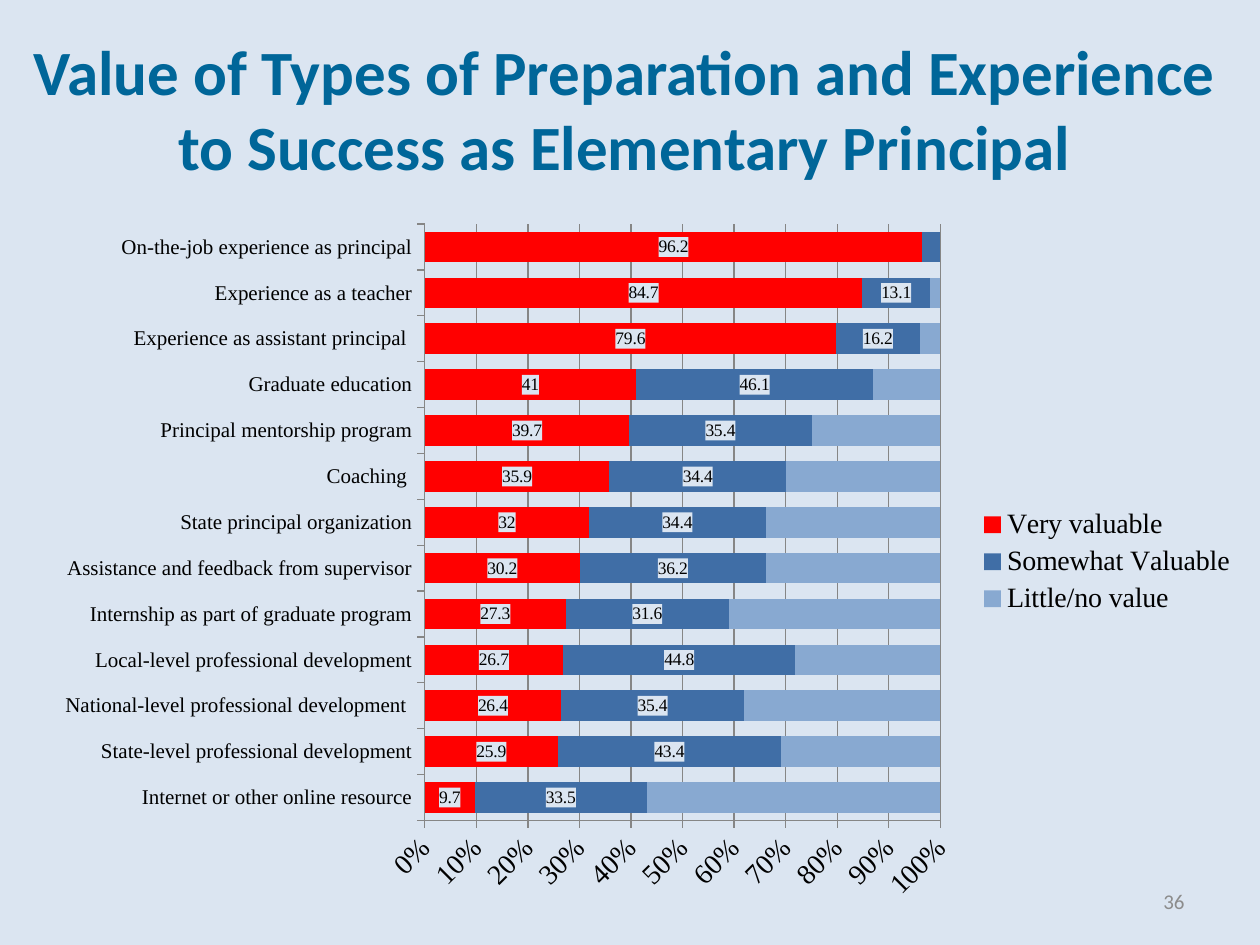
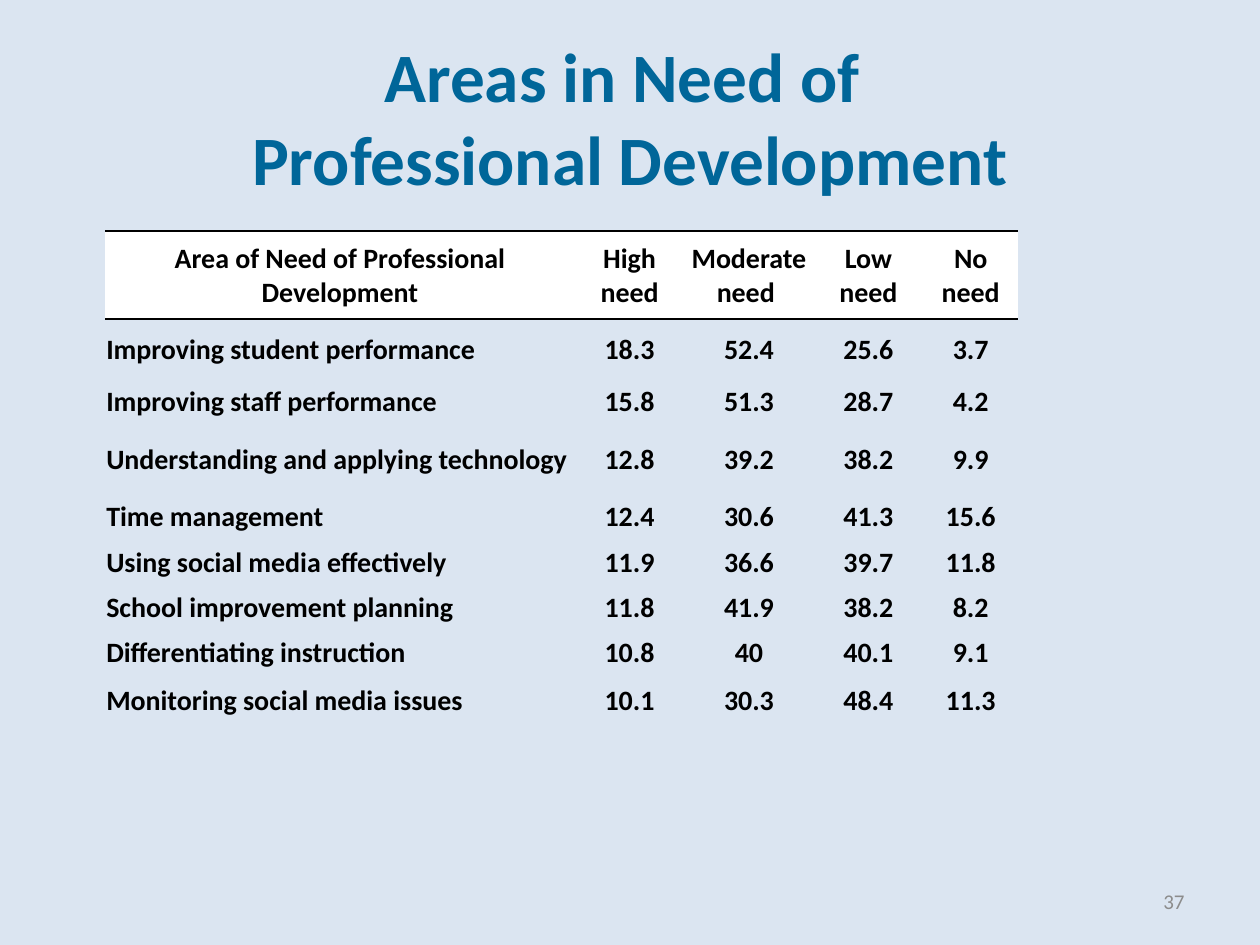
"""Build two survey slides: preparation value chart and development needs table."""
import lxml.etree
import pptx
import pptx.chart.data
import pptx.dml.color
import pptx.enum.chart
import pptx.enum.text
import pptx.oxml
import pptx.oxml.ns
import pptx.util

Pt = pptx.util.Pt
ALIGN = pptx.enum.text.PP_ALIGN
MIDDLE = pptx.enum.text.MSO_ANCHOR.MIDDLE
qn = pptx.oxml.ns.qn
NS = pptx.oxml.ns.nsdecls("a", "c")

COLORS = {
    "background": "DBE5F1", "title": "006699", "text": "000000", "number": "8C8C8C",
    "axis": "868686", "header": "FFFFFF",
    "very": "FF0000", "somewhat": "406EA6", "little": "88A9D1",
}
BODY_FONT = "Calibri"
CHART_FONT = "Times New Roman"
NUMBER_BOX = (516, 500.5, 168, 28.75)
NO_STYLE = "{2D5ABB26-0587-4C30-8999-92F81FD0307C}"

RATINGS = ("Very valuable", "Somewhat Valuable", "Little/no value")
RATING_COLORS = ("very", "somewhat", "little")
EXPERIENCES = [
    ("Internet or other online resource", 9.7, 33.5, 57),
    ("State-level professional development", 25.9, 43.4, 31),
    ("National-level professional development ", 26.4, 35.4, 38),
    ("Local-level professional development", 26.7, 44.8, 28),
    ("Internship as part of graduate program", 27.3, 31.6, 41),
    ("Assistance and feedback from supervisor", 30.2, 36.2, 34),
    ("State principal organization", 32, 34.4, 34),
    ("Coaching ", 35.9, 34.4, 30),
    ("Principal mentorship program", 39.7, 35.4, 25),
    ("Graduate education", 41, 46.1, 13),
    ("Experience as assistant principal ", 79.6, 16.2, 4),
    ("Experience as a teacher", 84.7, 13.1, 2),
    ("On-the-job experience as principal", 96.2, 3.5, 0),
]

NEEDS = [
    ("Area of Need of Professional Development",
     "High need", "Moderate need ", "Low need", "No need"),
    ("Improving student performance", "18.3", "52.4", "25.6", "3.7"),
    ("Improving staff performance", "15.8", "51.3", "28.7", "4.2"),
    ("Understanding and applying technology", "12.8", "39.2", "38.2", "9.9"),
    ("Time management", "12.4", "30.6", "41.3", "15.6"),
    ("Using social media effectively", "11.9", "36.6", "39.7", "11.8"),
    ("School improvement planning", "11.8", "41.9", "38.2", "8.2"),
    ("Differentiating instruction", "10.8", "40", "40.1", "9.1"),
    ("Monitoring social media issues", "10.1", "30.3", "48.4", "11.3"),
]
NEED_WIDTHS = (268.5, 62.5, 74, 62.5, 54.5)
NEED_HEIGHTS = (50.4, 33.8, 25.8, 40.4, 25.8, 25.8, 25.8, 25.8, 29.4)


def rgb(name):
    """Return the named palette colour."""
    return pptx.dml.color.RGBColor.from_string(COLORS[name])


def style_font(font, family, size, color, bold=False):
    """Set family, size, colour and weight of a font."""
    font.name, font.size, font.bold = family, Pt(size), bold
    font.color.rgb = rgb(color)


def add_text(slide, box, text, size, color, align, bold=False):
    """Add a vertically centred text box."""
    frame = slide.shapes.add_textbox(*map(Pt, box)).text_frame
    frame.word_wrap = True
    frame.vertical_anchor = MIDDLE
    paragraph = frame.paragraphs[0]
    paragraph.text = text
    paragraph.alignment = align
    style_font(paragraph.font, BODY_FONT, size, color, bold)


def add_page(deck, title, title_box, title_size, number):
    """Add a blank slide with background, title and slide number."""
    slide = deck.slides.add_slide(deck.slide_layouts[6])
    fill = slide.background.fill
    fill.solid()
    fill.fore_color.rgb = rgb("background")
    add_text(slide, title_box, title, title_size, "title", ALIGN.CENTER, True)
    add_text(slide, NUMBER_BOX, str(number), 12, "number", ALIGN.RIGHT)
    return slide


def label_values(series, hidden=()):
    """Show values on background-coloured tags, except at hidden points."""
    labels = series.data_labels
    labels.show_value = True
    style_font(labels.font, CHART_FONT, 10, "text")
    tag = pptx.oxml.parse_xml(
        f'<c:spPr {NS}><a:solidFill><a:srgbClr val="{COLORS["background"]}"/>'
        '</a:solidFill></c:spPr>')
    labels._element.find(qn("c:txPr")).addprevious(tag)
    for index in hidden:
        labels._element.insert(0, pptx.oxml.parse_xml(
            f'<c:dLbl {NS}><c:idx val="{index}"/><c:delete val="1"/></c:dLbl>'))


def place_plot(chart, x, y, w, h):
    """Fix the inner plot area as fractions of the chart."""
    area = chart._chartSpace.find(".//" + qn("c:plotArea"))
    for old in area.findall(qn("c:layout")):
        area.remove(old)
    area.insert(0, pptx.oxml.parse_xml(
        f'<c:layout {NS}><c:manualLayout><c:layoutTarget val="inner"/>'
        '<c:xMode val="edge"/><c:yMode val="edge"/>'
        f'<c:x val="{x}"/><c:y val="{y}"/><c:w val="{w}"/><c:h val="{h}"/>'
        '</c:manualLayout></c:layout>'))


def add_value_chart(slide, box):
    """Add the stacked bars that rate each kind of experience."""
    experiences, *ratings = zip(*EXPERIENCES)
    data = pptx.chart.data.CategoryChartData()
    data.categories = experiences
    for rating, values in zip(RATINGS, ratings):
        data.add_series(rating, values)
    kind = pptx.enum.chart.XL_CHART_TYPE.BAR_STACKED_100
    chart = slide.shapes.add_chart(kind, *map(Pt, box), data).chart
    style_font(chart.font, CHART_FONT, 16, "text")
    chart.has_title = False
    chart.has_legend = True
    chart.legend.position = pptx.enum.chart.XL_LEGEND_POSITION.RIGHT
    chart.legend.include_in_layout = False
    place_plot(chart, 0.317, 0.02, 0.427, 0.848)

    bars = chart.plots[0]
    bars.gap_width, bars.overlap = 50, 100
    bars.vary_by_categories = False
    for series, color in zip(bars.series, RATING_COLORS):
        series.format.fill.solid()
        series.format.fill.fore_color.rgb = rgb(color)
    label_values(bars.series[0])
    label_values(bars.series[1], hidden=[len(EXPERIENCES) - 1])

    for axis, size in ((chart.category_axis, 12), (chart.value_axis, 16)):
        axis.major_tick_mark = pptx.enum.chart.XL_TICK_MARK.OUTSIDE
        axis.format.line.color.rgb = rgb("axis")
        style_font(axis.tick_labels.font, CHART_FONT, size, "text")
    percent = chart.value_axis
    percent.has_major_gridlines = True
    percent.major_gridlines.format.line.color.rgb = rgb("axis")
    percent.major_unit = 0.1
    percent.tick_labels.number_format = "0%"
    percent.tick_labels.number_format_is_linked = False
    percent._element.find(".//" + qn("a:bodyPr")).set("rot", "-2700000")


def rule_cell(cell):
    """Draw thin rules above and below a cell."""
    properties = cell._tc.get_or_add_tcPr()
    for index, side in enumerate(("lnT", "lnB")):
        properties.insert(index, pptx.oxml.parse_xml(
            f'<a:{side} {NS} w="12700"><a:solidFill>'
            f'<a:srgbClr val="{COLORS["text"]}"/></a:solidFill></a:{side}>'))


def fill_cell(cell, text, header, align):
    """Write and style one table cell."""
    cell.margin_left = cell.margin_right = cell.margin_top = Pt(0.75)
    cell.margin_bottom = 0
    cell.vertical_anchor = MIDDLE
    paragraph = cell.text_frame.paragraphs[0]
    paragraph.text = text
    paragraph.alignment = align
    style_font(paragraph.font, BODY_FONT, 16, "text", True)
    if header:
        cell.fill.solid()
        cell.fill.fore_color.rgb = rgb("header")
        rule_cell(cell)
    else:
        cell.fill.background()


def add_needs_table(slide, left, top):
    """Add the table of development needs."""
    table = slide.shapes.add_table(
        len(NEEDS), len(NEED_WIDTHS), Pt(left), Pt(top),
        Pt(sum(NEED_WIDTHS)), Pt(sum(NEED_HEIGHTS))).table
    table.first_row = table.horz_banding = False
    table._tbl.find(".//" + qn("a:tableStyleId")).text = NO_STYLE
    for column, width in zip(table.columns, NEED_WIDTHS):
        column.width = Pt(width)
    for r, (need, height) in enumerate(zip(NEEDS, NEED_HEIGHTS)):
        table.rows[r].height = Pt(height)
        for c, text in enumerate(need):
            align = ALIGN.LEFT if r and not c else ALIGN.CENTER
            fill_cell(table.cell(r, c), text, r == 0, align)


def main():
    """Build and save the deck."""
    deck = pptx.Presentation()
    deck.slide_width, deck.slide_height = Pt(720), Pt(540)
    value = add_page(
        deck, "Value of Types of Preparation and Experience to Success as Elementary Principal",
        (0, 12, 714, 99.5), 36, 36)
    add_value_chart(value, (24, 120, 690, 402))
    needs = add_page(deck, "Areas in Need of \vProfessional Development",
                     (36, 21.6, 648, 90), 39.6, 37)
    add_needs_table(needs, 60, 132)
    deck.save("out.pptx")


if __name__ == "__main__":
    main()
